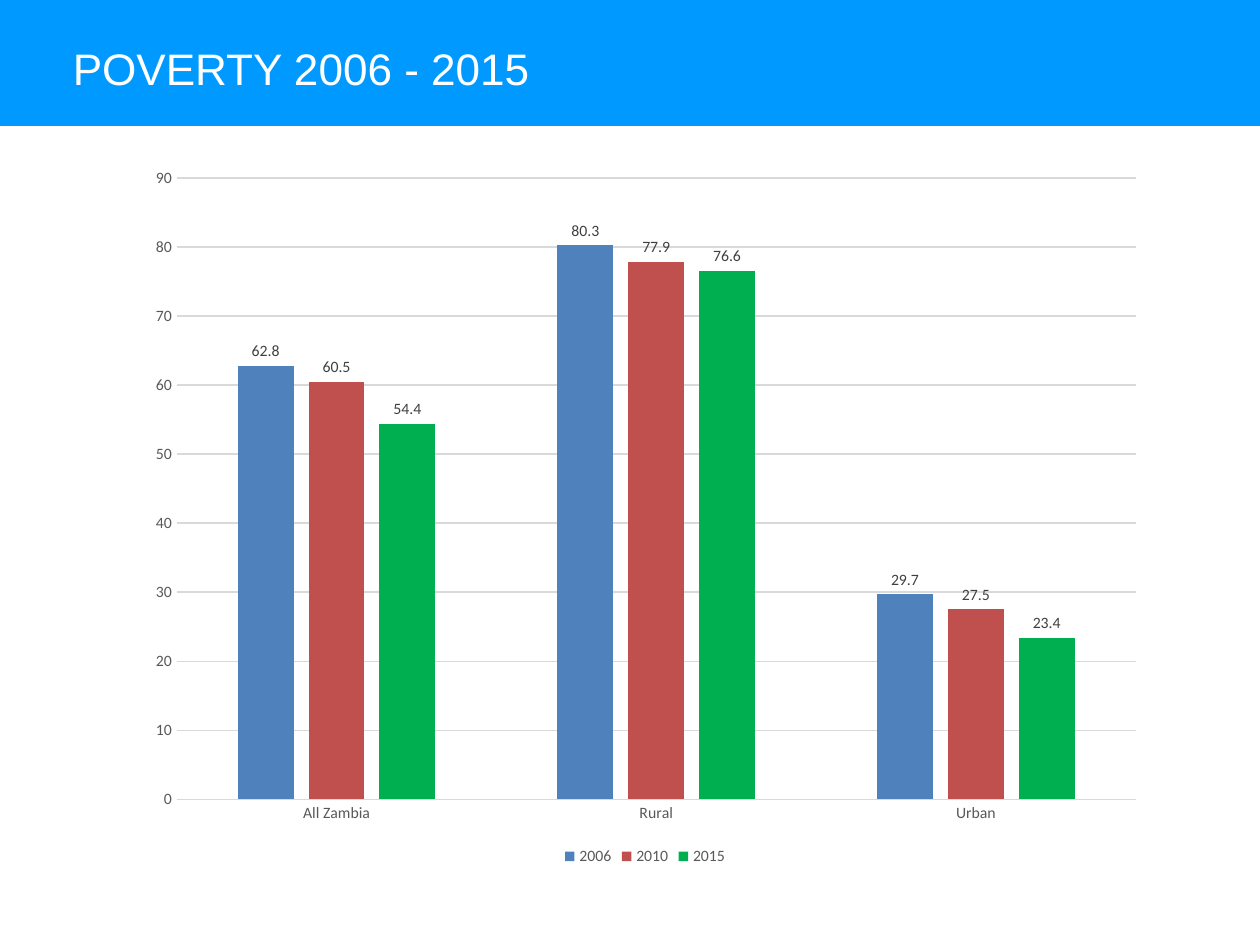
from lxml import etree
from pptx import Presentation
from pptx import util as u
from pptx.chart.data import CategoryChartData
from pptx.dml.color import RGBColor
from pptx.enum import chart as ch, shapes, text
from pptx.oxml.ns import qn

YEARS = {
    "2006": ("4F81BD", (62.8, 80.3, 29.7)),
    "2010": ("C0504D", (60.5, 77.9, 27.5)),
    "2015": ("00B050", (54.4, 76.6, 23.4)),
}
AREAS = ("All Zambia", "Rural", "Urban")
PLOT = {"x": 0.04, "y": 0.096, "w": 0.942, "h": 0.811}


def rgb(value):
    return RGBColor.from_string(value)


class Deck:
    blue, white, gray, dark, rule = "0099FF", "FFFFFF", "595959", "404040", "D9D9D9"
    title_font, chart_font = "Arial", "Calibri"

    def __init__(self, width, height):
        self.prs = Presentation()
        self.prs.slide_width, self.prs.slide_height = u.Inches(width), u.Inches(height)
        self.s = self.prs.slides.add_slide(self.prs.slide_layouts[6])

    def style(self, font, name, size, color):
        font.name, font.size = name, u.Pt(size)
        font.color.rgb = rgb(color)

    def line(self, line_format):
        line_format.color.rgb = rgb(self.rule)
        line_format.width = u.Pt(0.75)

    def band(self, *box):
        sp = self.s.shapes.add_shape(shapes.MSO_SHAPE.RECTANGLE, *map(u.Inches, box))
        sp.shadow.inherit = False
        sp.fill.solid()
        sp.fill.fore_color.rgb = rgb(self.blue)
        sp.line.fill.background()

    def title(self, words, *box):
        tf = self.s.shapes.add_textbox(*map(u.Inches, box)).text_frame
        tf.word_wrap = True
        tf.vertical_anchor = text.MSO_ANCHOR.MIDDLE
        r = tf.paragraphs[0].add_run()
        r.text = words
        self.style(r.font, self.title_font, 25.2, self.white)

    def columns(self, categories, series, *box):
        data = CategoryChartData()
        data.categories = categories
        for name, (_, values) in series.items():
            data.add_series(name, values)
        chart = self.s.shapes.add_chart(
            ch.XL_CHART_TYPE.COLUMN_CLUSTERED, *map(u.Inches, box), data
        ).chart
        self.style(chart.font, self.chart_font, 10, "000000")
        chart.has_title = False
        chart.has_legend = True
        chart.legend.position = ch.XL_LEGEND_POSITION.BOTTOM
        chart.legend.include_in_layout = False
        self.style(chart.legend.font, self.chart_font, 9, self.gray)

        for axis in (chart.category_axis, chart.value_axis):
            axis.major_tick_mark = axis.minor_tick_mark = ch.XL_TICK_MARK.NONE
            self.style(axis.tick_labels.font, self.chart_font, 9, self.gray)
        self.line(chart.category_axis.format.line)
        chart.value_axis.format.line.fill.background()
        chart.value_axis.minimum_scale, chart.value_axis.maximum_scale = 0, 90
        chart.value_axis.major_unit = 10
        self.line(chart.value_axis.major_gridlines.format.line)

        plot = chart.plots[0]
        plot.gap_width, plot.overlap = 219, -27
        plot.vary_by_categories = False
        for bars, (color, _) in zip(plot.series, series.values()):
            bars.format.fill.solid()
            bars.format.fill.fore_color.rgb = rgb(color)
            labels = bars.data_labels
            labels.show_value = True
            labels.position = ch.XL_LABEL_POSITION.OUTSIDE_END
            self.style(labels.font, self.chart_font, 9, self.dark)
        self.place_plot(chart)

    def place_plot(self, chart):
        area = chart.element.find(".//" + qn("c:plotArea"))
        layout = area.find(qn("c:layout"))
        if layout is None:
            layout = etree.Element(qn("c:layout"))
            area.insert(0, layout)
        manual = etree.SubElement(layout, qn("c:manualLayout"))
        settings = {"layoutTarget": "inner", "xMode": "edge", "yMode": "edge", **PLOT}
        for tag, value in settings.items():
            etree.SubElement(manual, qn("c:" + tag), val=str(value))


def main():
    deck = Deck(10, 7.5)
    deck.band(-0.01, 0, 10.01, 1)
    deck.title("POVERTY 2006 - 2015", 0.48, 0.26, 7.53, 0.55)
    deck.columns(AREAS, YEARS, 1.08, 0.83, 8.08, 6.08)
    deck.prs.save("out.pptx")


if __name__ == "__main__":
    main()
